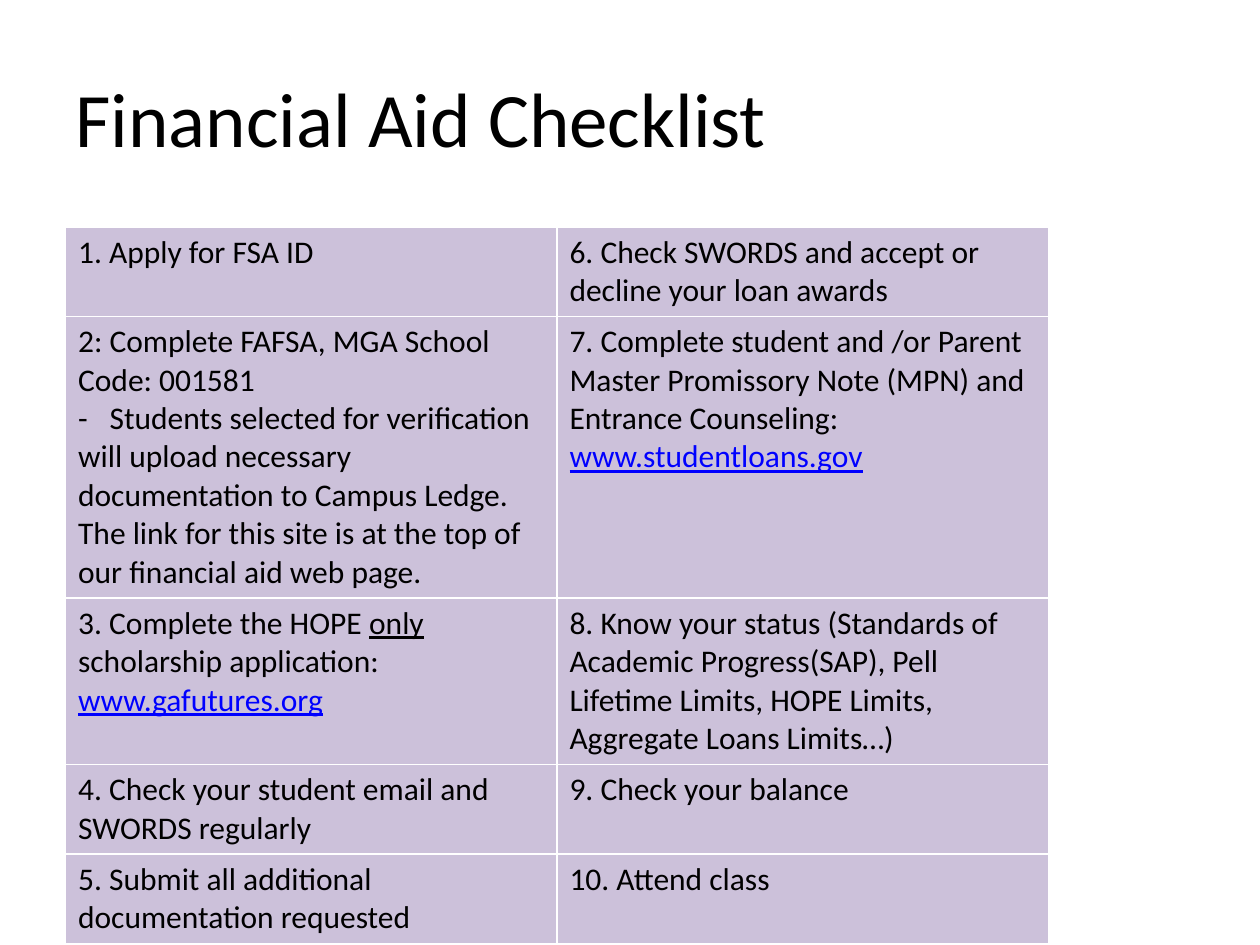
from dataclasses import dataclass

from lxml.etree import SubElement
from pptx import Presentation
from pptx.dml.color import RGBColor
from pptx.enum.text import MSO_ANCHOR, PP_ALIGN
from pptx.oxml.ns import qn
from pptx.util import Inches, Pt


@dataclass(frozen=True)
class Theme:
    font: str = "Calibri"
    ink: str = "000000"
    link: str = "0000FF"
    cell: str = "CCC1DA"
    rule: str = "FFFFFF"
    title_size: int = 44
    body_size: int = 18
    rule_width: int = 1


THEME = Theme()
TITLE_ONLY = 5
ROW_HEIGHTS = (0.66, 1.93, 1.18, 0.66, 0.66)
COLUMN_WIDTH = 3.9


def plain(text):
    return text, THEME.ink, False


def underlined(text):
    return text, THEME.ink, True


def web_address(text):
    return text, THEME.link, True


# Each step is a list of paragraphs, and each paragraph a list of runs.
FIRST_STEPS = [
    [[plain("1. Apply for FSA ID")]],
    [
        [plain("2: Complete FAFSA, MGA School Code: 001581")],
        [plain("-\tStudents selected for verification will upload necessary "
               "documentation to Campus Ledge. The link for this site is at "
               "the top of our financial aid web page.")],
    ],
    [[plain("3. Complete the HOPE "), underlined("only"),
      plain(" scholarship application: "), web_address("www.gafutures.org")]],
    [[plain("4. Check your student email and SWORDS regularly")]],
    [[plain("5. Submit all additional documentation requested")]],
]
LATER_STEPS = [
    [[plain("6. Check SWORDS and accept or decline your loan awards")]],
    [[plain("7. Complete student and /or Parent Master Promissory Note (MPN) "
            "and Entrance Counseling: "),
      web_address("www.studentloans.gov")]],
    [[plain("8. Know your status (Standards of Academic Progress(SAP), Pell "
            "Lifetime Limits, HOPE Limits, Aggregate Loans Limits…)")]],
    [[plain("9. Check your balance")]],
    [[plain("10. Attend class")]],
]


def add_run(paragraph, text, color, underline, size):
    run = paragraph.add_run()
    run.text = text
    run.font.name = THEME.font
    run.font.size = Pt(size)
    run.font.color.rgb = RGBColor.from_string(color)
    if underline:
        run.font.underline = True


def add_tab_stop(paragraph, position):
    tabs = SubElement(paragraph._p.get_or_add_pPr(), qn("a:tabLst"))
    SubElement(tabs, qn("a:tab"), pos=str(position), algn="l")


def add_borders(cell):
    properties = cell._tc.get_or_add_tcPr()
    for side in ("a:lnL", "a:lnR", "a:lnT", "a:lnB"):
        line = SubElement(properties, qn(side), w=str(Pt(THEME.rule_width)))
        fill = SubElement(line, qn("a:solidFill"))
        SubElement(fill, qn("a:srgbClr"), val=THEME.rule)


def fill_cell(cell, step):
    add_borders(cell)
    cell.fill.solid()
    cell.fill.fore_color.rgb = RGBColor.from_string(THEME.cell)
    frame = cell.text_frame
    for index, runs in enumerate(step):
        paragraph = frame.add_paragraph() if index else frame.paragraphs[0]
        if "\t" in runs[0][0]:
            add_tab_stop(paragraph, Inches(0.25))
        for run in runs:
            add_run(paragraph, *run, THEME.body_size)


def set_title(slide, text):
    title = slide.shapes.title
    title.left, title.top = Inches(0.5), Inches(0.3)
    title.width, title.height = Inches(9), Inches(1.25)
    title.text_frame.vertical_anchor = MSO_ANCHOR.MIDDLE
    paragraph = title.text_frame.paragraphs[0]
    paragraph.alignment = PP_ALIGN.LEFT
    add_run(paragraph, *plain(text), THEME.title_size)


def add_checklist(slide, columns):
    table = slide.shapes.add_table(
        len(ROW_HEIGHTS), len(columns), Inches(0.52), Inches(1.8),
        Inches(COLUMN_WIDTH * len(columns)), Inches(sum(ROW_HEIGHTS))).table
    table.first_row = table.horz_banding = False
    for row, height in zip(table.rows, ROW_HEIGHTS):
        row.height = Inches(height)
    for column_index, steps in enumerate(columns):
        table.columns[column_index].width = Inches(COLUMN_WIDTH)
        for row_index, step in enumerate(steps):
            fill_cell(table.cell(row_index, column_index), step)


def main():
    deck = Presentation()
    deck.slide_width, deck.slide_height = Inches(10), Inches(7.5)
    slide = deck.slides.add_slide(deck.slide_layouts[TITLE_ONLY])
    set_title(slide, "Financial Aid Checklist")
    add_checklist(slide, (FIRST_STEPS, LATER_STEPS))
    deck.save("out.pptx")


if __name__ == "__main__":
    main()
